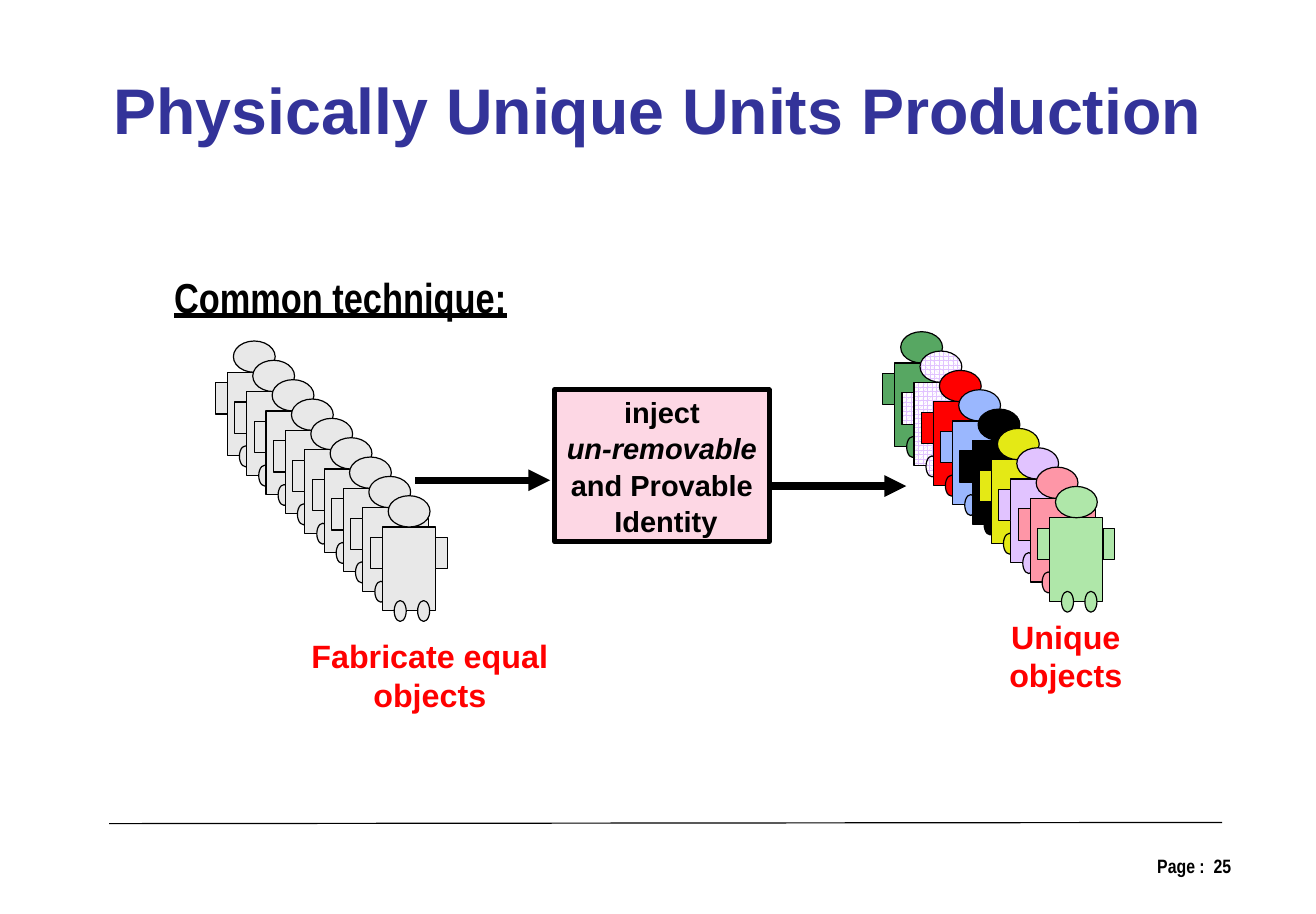
from dataclasses import dataclass, field

from lxml import etree
from pptx import Presentation
from pptx import util as u
from pptx.dml.color import RGBColor
from pptx.enum import dml, shapes, text
from pptx.oxml import ns

SLIDE_W, SLIDE_H = 11.34, 7.88
UNIT = SLIDE_W / 68

COLORS = {
    "title": "333399",
    "black": "000000",
    "white": "FFFFFF",
    "red": "FF0000",
    "rose": "FDD7E4",
    "grey": "E8E8E8",
    "green": "57A762",
    "blue": "9AB7FE",
    "yellow": "E4E915",
    "lilac": "E1C3FF",
    "pink": "FE96A7",
    "mint": "AFE7A9",
}
CHECKED = "checked"
RECT, OVAL = shapes.MSO_SHAPE.RECTANGLE, shapes.MSO_SHAPE.OVAL
LEFT, CENTER, RIGHT = text.PP_ALIGN.LEFT, text.PP_ALIGN.CENTER, text.PP_ALIGN.RIGHT
TOP, MIDDLE, BOTTOM = text.MSO_ANCHOR.TOP, text.MSO_ANCHOR.MIDDLE, text.MSO_ANCHOR.BOTTOM


@dataclass(frozen=True)
class Box:
    col: float
    row: float
    cols: float
    rows: float

    def emu(self) -> list[int]:
        return [grid(v) for v in (self.col, self.row, self.cols, self.rows)]


@dataclass(frozen=True)
class Part:
    kind: shapes.MSO_SHAPE
    box: Box


@dataclass(frozen=True)
class Row:
    col: float
    row: float
    fills: list[str]


@dataclass(frozen=True)
class Label:
    box: Box
    lines: list[str]
    size: float
    color: str
    font: str = "Arial"
    align: text.PP_ALIGN = CENTER
    anchor: text.MSO_ANCHOR = TOP
    wrap: bool = False
    spacing: float = 1.0
    extra: dict[str, dict[str, bool]] = field(default_factory=dict)


@dataclass(frozen=True)
class Line:
    start: tuple[float, float]
    end: tuple[float, float]
    width: float
    arrow: bool = False


RIGHT_FOOT = Part(OVAL, Box(1.83, 3.8, 0.62, 1.08))
FIGURE = [
    Part(RECT, Box(0, 0, 2.76, 4.32)),
    Part(OVAL, Box(0.31, -1.62, 2.16, 1.62)),
    Part(RECT, Box(-0.62, 0.54, 0.62, 1.62)),
    Part(RECT, Box(2.76, 0.54, 0.62, 1.62)),
    Part(OVAL, Box(0.62, 3.8, 0.62, 1.08)),
]
EQUAL_OBJECTS = Row(11.75, 19.25, ["grey"] * 9)
UNIQUE_OBJECTS = Row(46.23, 18.77, [
    "green", CHECKED, "red", "blue", "black", "yellow", "lilac", "pink", "mint",
])

PAGE = Label(Box(48.81, 43.84, 15.47, 3.18), ["Page :  25"], 12, "black",
             "Arial Narrow", RIGHT, wrap=True)
TITLE = Label(Box(1.92, 3.3, 64.1, 4.62), ["Physically Unique Units Production"],
              40, "title", anchor=BOTTOM, wrap=True)
IDENTITY = Label(Box(28.66, 20.15, 11.09, 7.86),
                 ["inject", "un-removable", "and Provable", " Identity"],
                 18, "black", anchor=MIDDLE, spacing=1.04,
                 extra={"un-removable": {"italic": True}})
FABRICATE = Label(Box(12.29, 32.62, 19.85, 2.64), ["Fabricate equal objects"], 20, "red")
UNIQUE = Label(Box(48.45, 31.6, 13.25, 2.64), ["Unique objects"], 20, "red")
TECHNIQUE = Label(Box(8.34, 13.73, 18.65, 3.3), ["Common technique:"], 26, "black",
                  "Arial Narrow", LEFT,
                  extra={"Common technique:": {"underline": True}})

FOOTER_RULE = Line((5.64, 42.58), (63.15, 42.52), 0.75)
TO_IDENTITY = Line((21.47, 24.83), (28.43, 24.83), 4.5, True)
FROM_IDENTITY = Line((39.82, 25.13), (46.83, 25.13), 4.5, True)


def grid(n: float) -> int:
    return u.Inches(n * UNIT)


def rgb(name: str) -> RGBColor:
    return RGBColor.from_string(COLORS[name])


def assign(target, values: dict) -> None:
    for name, value in values.items():
        setattr(target, name, value)


def draw_shape(slide, kind: shapes.MSO_SHAPE, box: Box, fill: str, width: float):
    sp = slide.shapes.add_shape(kind, *box.emu())
    sp.shadow.inherit = False
    if fill == CHECKED:
        sp.fill.patterned()
        sp.fill.pattern = dml.MSO_PATTERN.SPHERE
        sp.fill.fore_color.rgb = rgb("lilac")
        sp.fill.back_color.rgb = rgb("white")
    else:
        sp.fill.solid()
        sp.fill.fore_color.rgb = rgb(fill)
    sp.line.color.rgb = rgb("black")
    sp.line.width = u.Pt(width)
    return sp


def draw_row(slide, row: Row) -> None:
    for i, fill in enumerate(row.fills):
        front = i == len(row.fills) - 1
        for part in FIGURE + [RIGHT_FOOT] * front:
            b = part.box
            box = Box(row.col + i + b.col, row.row + i + b.row, b.cols, b.rows)
            draw_shape(slide, part.kind, box, fill, 0.75)


def write(sp, label: Label) -> None:
    tf = sp.text_frame
    assign(tf, {
        "word_wrap": label.wrap, "vertical_anchor": label.anchor,
        "margin_left": u.Inches(0.11), "margin_right": u.Inches(0.11),
        "margin_top": u.Inches(0.05), "margin_bottom": u.Inches(0.05),
    })
    for i, line in enumerate(label.lines):
        p = tf.add_paragraph() if i else tf.paragraphs[0]
        assign(p, {"alignment": label.align, "line_spacing": label.spacing})
        r = p.add_run()
        r.text = line
        style = {"name": label.font, "size": u.Pt(label.size), "bold": True}
        assign(r.font, style | label.extra.get(line, {}))
        r.font.color.rgb = rgb(label.color)


def draw_label(slide, label: Label) -> None:
    write(slide.shapes.add_textbox(*label.box.emu()), label)


def draw_line(slide, line: Line) -> None:
    ends = [grid(v) for v in line.start + line.end]
    sp = slide.shapes.add_connector(shapes.MSO_CONNECTOR.STRAIGHT, *ends)
    sp.line.color.rgb = rgb("black")
    sp.line.width = u.Pt(line.width)
    if line.arrow:
        ln = sp.line._get_or_add_ln()
        etree.SubElement(ln, ns.qn("a:tailEnd"), type="triangle")
    etree.SubElement(sp._element.spPr, ns.qn("a:effectLst"))


def main() -> None:
    prs = Presentation()
    assign(prs, {"slide_width": u.Inches(SLIDE_W), "slide_height": u.Inches(SLIDE_H)})
    slide = prs.slides.add_slide(prs.slide_layouts[6])
    draw_label(slide, PAGE)
    draw_line(slide, FOOTER_RULE)
    draw_label(slide, TITLE)
    draw_line(slide, TO_IDENTITY)
    write(draw_shape(slide, RECT, IDENTITY.box, "rose", 3), IDENTITY)
    draw_row(slide, EQUAL_OBJECTS)
    draw_label(slide, FABRICATE)
    draw_row(slide, UNIQUE_OBJECTS)
    draw_label(slide, UNIQUE)
    draw_line(slide, FROM_IDENTITY)
    draw_label(slide, TECHNIQUE)
    prs.save("out.pptx")


if __name__ == "__main__":
    main()
